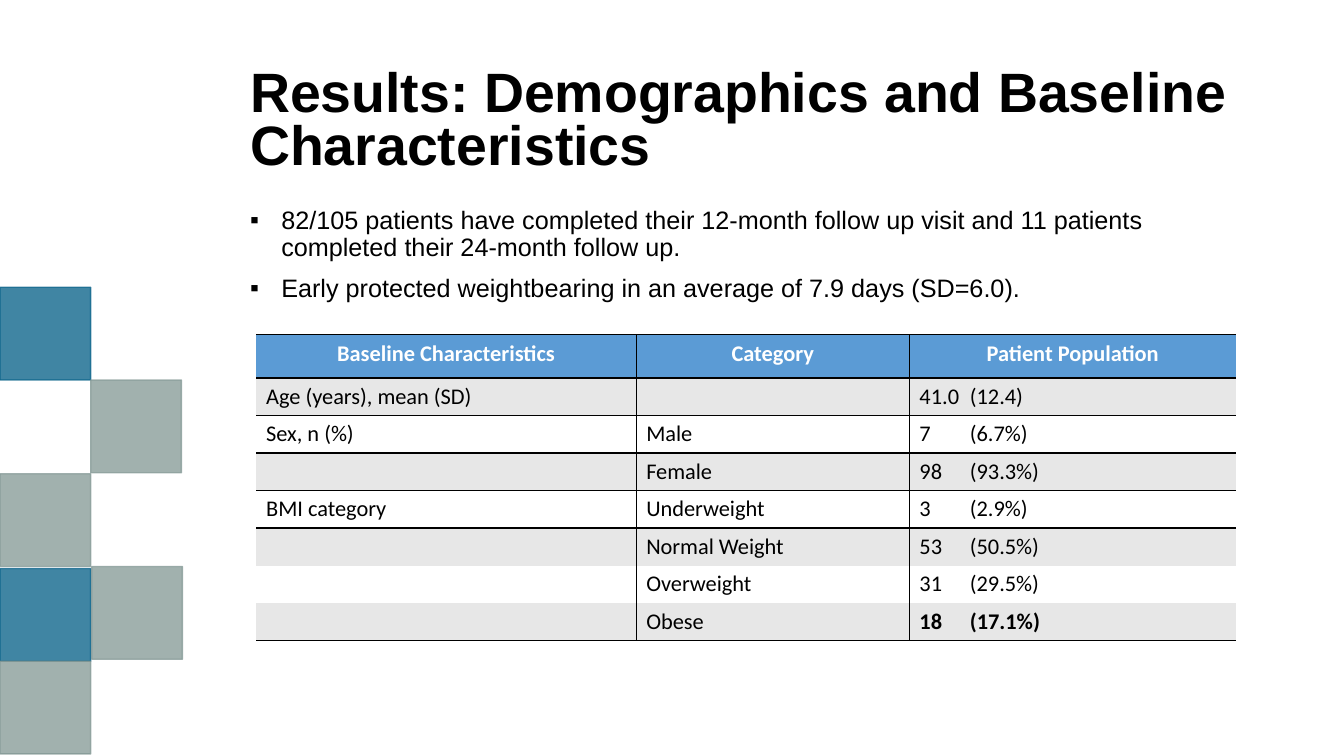
from lxml.etree import SubElement
from pptx import Presentation
from pptx.dml.color import RGBColor
from pptx.enum.shapes import MSO_SHAPE
from pptx.enum.text import MSO_ANCHOR, MSO_AUTO_SIZE, PP_ALIGN
from pptx.oxml.ns import qn
from pptx.util import Inches, Pt

TITLE = "Results: Demographics and Baseline Characteristics"
BULLETS = [
    "82/105 patients have completed their 12-month follow up visit "
    "and 11 patients completed their 24-month follow up.",
    "Early protected weightbearing in an average of 7.9 days (SD=6.0).",
]
ROWS = [
    ("Baseline Characteristics", "Category", "Patient Population"),
    ("Age (years), mean (SD)", "", "41.0 \t(12.4)"),
    ("Sex, n (%)", "Male", "7 \t(6.7%)"),
    ("", "Female", "98 \t(93.3%)"),
    ("BMI category", "Underweight", "3 \t(2.9%)"),
    ("", "Normal Weight", "53 \t(50.5%)"),
    ("", "Overweight", "31 \t(29.5%)"),
    ("", "Obese", "18 \t(17.1%)"),
]
RULED = {0, 1, 2, 3, 4, 5, len(ROWS)}  # row edges that carry a line
COL_WIDTHS = [3.77, 2.71, 3.24]
BLUE, SAGE = "005D85", "829794"
SQUARES = [(0, 2.85, BLUE), (0, 5.64, BLUE), (0, 6.56, SAGE),
           (0.9, 3.77, SAGE), (0.91, 5.62, SAGE), (0, 4.7, SAGE)]


def rgb(color):
    return RGBColor.from_string(color)


class SlideBuilder:
    text = dict(name="Arial", size=Pt(18), bold=False)
    title_text = dict(name="Arial", size=Pt(39.6), bold=True)
    cell_text = dict(name="Calibri", size=Pt(16), bold=False)
    black, white = "000000", "FFFFFF"
    header, band = "5B9BD5", "E7E7E7"

    def __init__(self, s):
        self.s = s

    def add_text(self, p, text, style, color=black):
        r = p.add_run()
        r.text = text
        for key, value in style.items():
            setattr(r.font, key, value)
        r.font.color.rgb = rgb(color)

    def place(self, sp, x, y, w, h, anchor):
        """Position a placeholder and return its text frame."""
        sp.left, sp.top, sp.width, sp.height = map(Inches, (x, y, w, h))
        tf = sp.text_frame
        for key, value in dict(word_wrap=True, vertical_anchor=anchor,
                               auto_size=MSO_AUTO_SIZE.NONE).items():
            setattr(tf, key, value)
        return tf

    def title(self, text, *box):
        p = self.place(self.s.shapes.title, *box, MSO_ANCHOR.MIDDLE).paragraphs[0]
        p.alignment, p.line_spacing = PP_ALIGN.LEFT, 0.8
        self.add_text(p, text, self.title_text)

    def bullets(self, items, *box):
        tf = self.place(self.s.placeholders[1], *box, MSO_ANCHOR.TOP)
        for i, item in enumerate(items):
            p = tf.add_paragraph() if i else tf.paragraphs[0]
            p.line_spacing, p.space_before = 0.9, Pt(10 if i else 0)
            pPr = p._p.get_or_add_pPr()
            pPr.set("marL", str(Inches(0.31)))
            pPr.set("indent", str(-Inches(0.31)))
            SubElement(pPr, qn("a:buFont"), typeface="Arial")
            SubElement(pPr, qn("a:buChar"), char="▪")
            self.add_text(p, item, self.text)

    def square(self, x, y, color):
        sp = self.s.shapes.add_shape(MSO_SHAPE.RECTANGLE, Inches(x), Inches(y),
                                     Inches(0.9), Inches(0.92))
        sp.shadow.inherit = False
        sp.line.width = Pt(1)
        for fill in (sp.fill, sp.line.fill):
            fill.solid()
            fill.fore_color.rgb = rgb(color)
        for clr in sp._element.spPr.iter(qn("a:srgbClr")):
            SubElement(clr, qn("a:alpha"), val="75000")

    def borders(self, cell, **sides):
        """Draw or clear each side of a cell, given in the order L, R, T, B."""
        tcPr = cell._tc.get_or_add_tcPr()
        for side, shown in sides.items():
            ln = SubElement(tcPr, qn(f"a:ln{side}"), w=str(Pt(1)))
            if shown:
                fill = SubElement(ln, qn("a:solidFill"))
                SubElement(fill, qn("a:srgbClr"), val=self.black)
            else:
                SubElement(ln, qn("a:noFill"))

    def cell(self, cell, text, row, col):
        last_row, last_col = len(ROWS) - 1, len(COL_WIDTHS) - 1
        self.borders(cell, L=col > 0, R=col < last_col,
                     T=row in RULED, B=row + 1 in RULED)
        head = row == 0
        cell.fill.solid()
        cell.fill.fore_color.rgb = rgb(
            self.header if head else self.band if row % 2 else self.white)
        p = cell.text_frame.paragraphs[0]
        p.alignment = PP_ALIGN.CENTER if head else PP_ALIGN.LEFT
        if text:
            bold = head or (row == last_row and col == last_col)
            self.add_text(p, text, {**self.cell_text, "bold": bold},
                          self.white if head else self.black)
        else:
            SubElement(p._p, qn("a:endParaRPr"), sz="1600")

    def table(self, rows, x, y, widths, head_height, row_height):
        height = head_height + row_height * (len(rows) - 1)
        tbl = self.s.shapes.add_table(len(rows), len(widths), Inches(x), Inches(y),
                                      Inches(sum(widths)), Inches(height)).table
        for column, width in zip(tbl.columns, widths):
            column.width = Inches(width)
        for i, row in enumerate(rows):
            tbl.rows[i].height = Inches(row_height if i else head_height)
            for j, text in enumerate(row):
                self.cell(tbl.cell(i, j), text, i, j)


def main():
    prs = Presentation()
    prs.slide_width, prs.slide_height = Inches(13.33), Inches(7.5)
    slide = SlideBuilder(prs.slides.add_slide(prs.slide_layouts[1]))
    for square in SQUARES:
        slide.square(*square)
    slide.title(TITLE, 2.38, 0.71, 10.04, 1.02)
    slide.table(ROWS, 2.54, 3.32, COL_WIDTHS, 0.43, 0.37)
    slide.bullets(BULLETS, 2.38, 2.01, 9.63, 1.06)
    prs.save("out.pptx")


if __name__ == "__main__":
    main()
